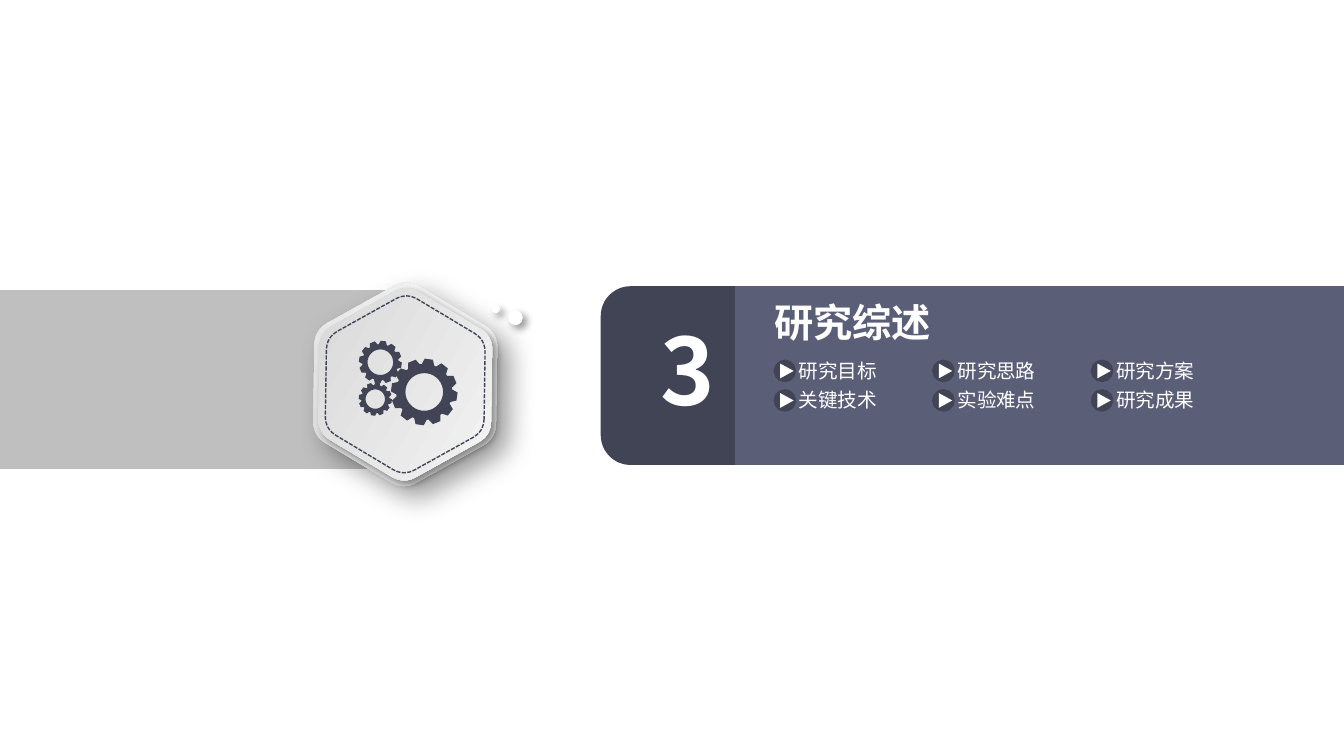
from math import cos, radians, sin

from lxml.etree import SubElement
from pptx import Presentation
from pptx.dml.color import RGBColor
from pptx.enum.dml import MSO_LINE
from pptx.enum.shapes import MSO_SHAPE as Preset
from pptx.enum.text import MSO_ANCHOR as Anchor, PP_ALIGN as Align
from pptx.oxml.ns import qn
from pptx.util import Inches, Pt

THEME = {
    "font": "Noto Sans CJK SC",
    "dark": "414455", "banner": "5B5E77", "band": "BFBFBF", "white": "FFFFFF",
    "metal": ("D3D3D3", "F9F9F9"),
    "number": 49.5, "title": 21, "topic": 10.5,
}
TOPICS = [("研究目标", "研究思路", "研究方案"),
          ("关键技术", "实验难点", "研究成果")]

deck = Presentation()
deck.slide_width = Inches(10)
deck.slide_height = deck.slide_width * 9 // 16
page = deck.slides.add_slide(deck.slide_layouts[6])
shapes = page.shapes
UNIT = deck.slide_width / 100  # the page is a grid of 100 columns of square cells


def paint(shape, fill=None, shadow=None):
    """Give a plain fill without outline; shadow is (blur, distance) in points."""
    shape.shadow.inherit = False
    shape.line.fill.background()
    if fill:
        shape.fill.solid()
        shape.fill.fore_color.rgb = RGBColor.from_string(THEME[fill])
    if shadow:
        effects = shape._element.spPr.find(qn("a:effectLst"))
        blur, distance = shadow
        outer = SubElement(effects, qn("a:outerShdw"), blurRad=str(Pt(blur)),
                           dist=str(Pt(distance)), dir="2700000",
                           algn="tl", rotWithShape="0")
        color = SubElement(outer, qn("a:srgbClr"), val="000000")
        SubElement(color, qn("a:alpha"), val="40000")


def write(text, cells, size, bold=False, align=Align.LEFT):
    box = shapes.add_textbox(*(int(cell * UNIT) for cell in cells))
    frame = box.text_frame
    frame.margin_left = frame.margin_right = 0
    frame.margin_top = frame.margin_bottom = 0
    frame.vertical_anchor = Anchor.MIDDLE
    frame.word_wrap = True
    para = frame.paragraphs[0]
    para.alignment = align
    span = para.add_run()
    span.text = text
    font = span.font
    font.name, font.size, font.bold = THEME["font"], Pt(THEME[size]), bold
    font.color.rgb = RGBColor.from_string(THEME["white"])
    east_asian = SubElement(span._r.get_or_add_rPr(), qn("a:ea"))
    east_asian.set("typeface", THEME["font"])


# Grey band behind the badge
band = shapes.add_shape(Preset.RECTANGLE, 0, int(21.6 * UNIT),
                        int(30.5 * UNIT), int(13.3 * UNIT))
paint(band, "band")

# Badge: three nested hexagons with rounded corners, the last one stitched
BADGE_X, BADGE_Y, TILT, ROUNDING = 30.15, 28.6, 30.9, 0.14
for radius, gradient_angle, shadow in [(7.85, 90, (15, 9)), (7.42, 0, (4, 3)),
                                       (6.82, None, None)]:
    corners = [(BADGE_X + radius * cos(radians(60 * side)),
                BADGE_Y + radius * sin(radians(60 * side))) for side in range(6)]
    outline = []
    for side, corner in enumerate(corners):
        before, after = corners[side - 1], corners[(side + 1) % 6]
        for step in range(9):
            t = step / 8
            pull_back, pull_on = ROUNDING * (1 - t) ** 2, ROUNDING * t ** 2
            outline.append(tuple(
                UNIT * (c + pull_back * (b - c) + pull_on * (a - c))
                for b, c, a in zip(before, corner, after)))
    builder = shapes.build_freeform(*outline[0])
    builder.add_line_segments(outline[1:], close=True)
    hexagon = builder.convert_to_shape()
    hexagon.rotation = TILT
    paint(hexagon, shadow=shadow)
    if gradient_angle is None:
        hexagon.fill.background()
        hexagon.line.color.rgb = RGBColor.from_string(THEME["dark"])
        hexagon.line.width = Pt(0.75)
        hexagon.line.dash_style = MSO_LINE.SQUARE_DOT
        continue
    hexagon.fill.gradient()
    hexagon.fill.gradient_angle = gradient_angle
    for position, (stop, color) in enumerate(
            zip(hexagon.fill.gradient_stops, THEME["metal"])):
        stop.position = position
        stop.color.rgb = RGBColor.from_string(color)

# Two small beads beside the badge
for left, top, size in [(36.6, 22.7, 0.6), (37.8, 23.1, 1.1)]:
    bead = shapes.add_shape(Preset.OVAL, int(left * UNIT), int(top * UNIT),
                            int(size * UNIT), int(size * UNIT))
    paint(bead, "white", (4, 3))

# Banner with its dark rounded end
for preset, left, width, fill in [(Preset.ROUNDED_RECTANGLE, 44.7, 53.7, "dark"),
                                  (Preset.RECTANGLE, 54.7, 45.5, "banner")]:
    panel = shapes.add_shape(preset, int(left * UNIT), int(21.3 * UNIT),
                             int(width * UNIT), int(13.3 * UNIT))
    paint(panel, fill)

write("3", (48.2, 22.8, 6, 9.3), "number", True, Align.CENTER)
write("研究综述", (57.6, 21.8, 21, 4.3), "title", True)

# Topics, each with a round play marker
for row, names in enumerate(TOPICS):
    for column, name in enumerate(names):
        left, top = 57.7 + 11.8 * column, 26.9 + 2.2 * row
        write(name, (left + 1.75, top - 0.3, 10, 1.9), "topic")
        disc = shapes.add_shape(Preset.OVAL, int(left * UNIT), int(top * UNIT),
                                int(1.4 * UNIT), int(1.4 * UNIT))
        paint(disc, "dark")
        disc.line.color.rgb = RGBColor.from_string(THEME["dark"])
        disc.line.width = Pt(2)
        arrow = shapes.add_shape(Preset.ISOSCELES_TRIANGLE,
                                 int((left + 0.3) * UNIT), int((top + 0.2) * UNIT),
                                 int(1.1 * UNIT), int(UNIT))
        arrow.rotation = 90
        paint(arrow, "white")

# Gears: twelve teeth around a round hole
TOOTH = [(-13, 0.84), (-7, 1), (7, 1), (13, 0.84)]
for center_x, center_y, radius, hole in [(31.57, 29.17, 2.48, 1.4),
                                         (28.3, 26.95, 1.6, 0.95),
                                         (27.93, 29.7, 1.24, 0.72)]:
    teeth = [(8 + 30 * tooth + turn, radius * share)
             for tooth in range(12) for turn, share in TOOTH]
    rim = [(-angle, hole) for angle in range(0, 360, 10)]
    contours = [[(UNIT * (center_x + reach * cos(radians(angle))),
                  UNIT * (center_y + reach * sin(radians(angle))))
                 for angle, reach in contour] for contour in (teeth, rim)]
    builder = shapes.build_freeform(*contours[0][0])
    builder.add_line_segments(contours[0][1:], close=True)
    builder.move_to(*contours[1][0])
    builder.add_line_segments(contours[1][1:], close=True)
    paint(builder.convert_to_shape(), "dark")

deck.save("out.pptx")
